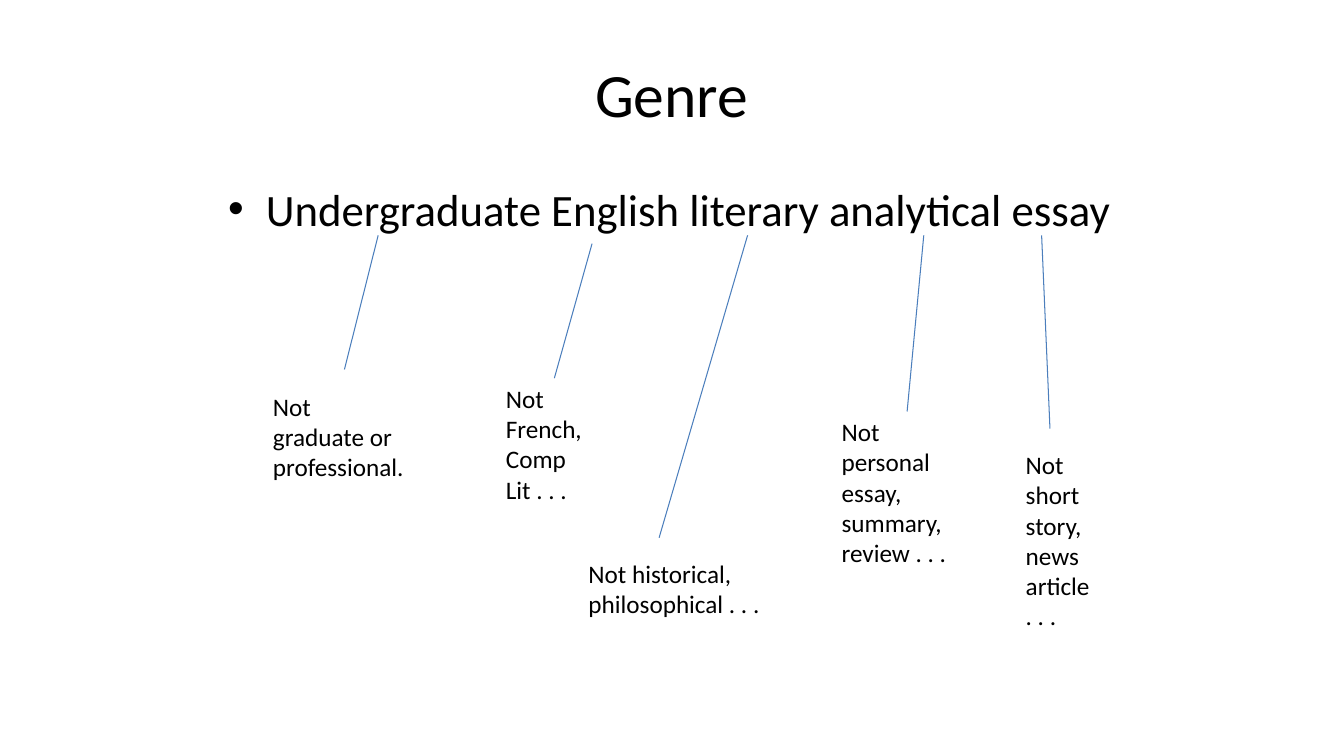
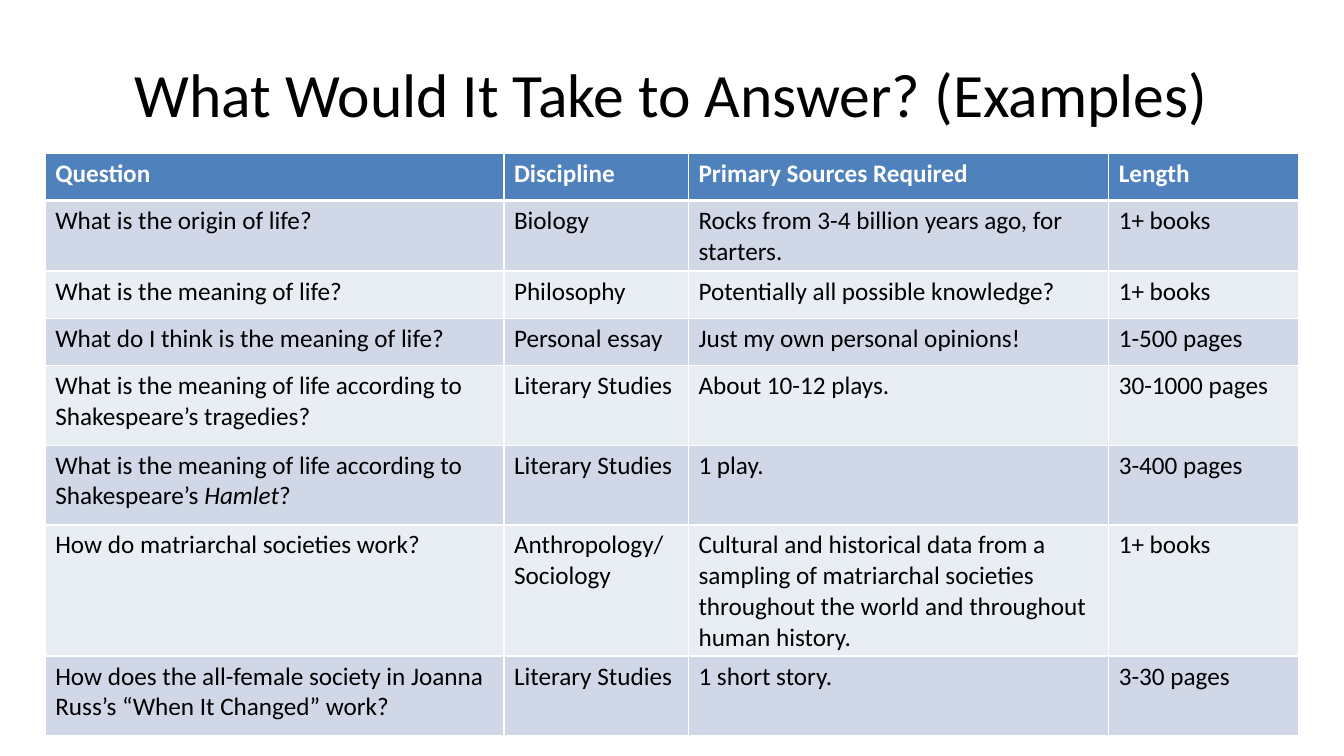
from lxml import etree
from pptx import Presentation
from pptx.dml.color import RGBColor as RGB
from pptx.enum.shapes import MSO_CONNECTOR as CONN
from pptx.enum.text import MSO_ANCHOR as ANCHOR, MSO_AUTO_SIZE as AUTO, PP_ALIGN as ALIGN
from pptx.oxml.ns import qn
from pptx.util import Cm, Pt

COLORS = {"text": "000000", "line": "4B7EBC", "header": "4F81BD",
          "odd": "D0D8E8", "even": "E9EDF4", "white": "FFFFFF"}
FONT = "Calibri"
TITLES = ["Genre", "What Would It Take to Answer? (Examples)"]

TOPIC = "Undergraduate English literary analytical essay"
# Note text, its box (left, top, width, height) and its line (x1, y1, x2, y2)
NOTES = [
    ("Not graduate or professional.",
     (6.63, 9.73, 3.81, 2.57), (9.53, 5.93, 8.68, 9.31)),
    ("Not French, Comp Lit . . .",
     (12.5, 9.53, 2.96, 3.33), (14.92, 6.14, 13.97, 9.53)),
    ("Not historical, philosophical . . .",
     (14.58, 13.94, 4.87, 1.8), (18.84, 5.93, 16.61, 13.55)),
    ("Not personal essay, summary, review . . .",
     (20.96, 10.37, 3.18, 4.11), (23.28, 5.93, 22.86, 10.37)),
    ("Not short story, news article . . .",
     (25.6, 11.2, 2.33, 4.88), (26.25, 5.93, 26.46, 10.8)),
]

COL_WIDTHS = [11.56, 4.65, 10.59, 4.78]
ROW_HEIGHTS = [1.19] * 4 + [2.01, 2.01, 2.87, 2.01]
ROWS = [
    ("Question", "Discipline", "Primary Sources Required", "Length"),
    ("What is the origin of life?", "Biology",
     "Rocks from 3-4 billion years ago, for starters.", "1+ books"),
    ("What is the meaning of life?", "Philosophy",
     "Potentially all possible knowledge?", "1+ books"),
    ("What do I think is the meaning of life?", "Personal essay",
     "Just my own personal opinions!", "1-500 pages"),
    ("What is the meaning of life according to Shakespeare’s tragedies?",
     "Literary Studies", "About 10-12 plays.", "30-1000 pages"),
    ("What is the meaning of life according to Shakespeare’s *Hamlet*?",
     "Literary Studies", "1 play.", "3-400 pages"),
    ("How do matriarchal societies work?", "Anthropology/\nSociology",
     "Cultural and historical data from a sampling of matriarchal societies "
     "throughout the world and throughout human history.", "1+ books"),
    ("How does the all-female society in Joanna Russ’s “When It Changed” work?",
     "Literary Studies", "1 short story.", "3-30 pages"),
]


def write(tf, text, size, color="text", bold=False):
    """Fill a text frame; newlines split paragraphs, asterisks mark italics."""
    for i, line in enumerate(text.split("\n")):
        p = tf.add_paragraph() if i else tf.paragraphs[0]
        for j, part in enumerate(line.split("*")):
            r = p.add_run()
            r.text = part
            style = {"name": FONT, "size": Pt(size), "bold": bold, "italic": j % 2 == 1}
            for name, value in style.items():
                setattr(r.font, name, value)
            r.font.color.rgb = RGB.from_string(COLORS[color])


def add_text(s, box, text, size):
    tf = s.shapes.add_textbox(*map(Cm, box)).text_frame
    tf.word_wrap = True
    write(tf, text, size)
    return tf


prs = Presentation()
prs.slide_width, prs.slide_height = Cm(33.87), Cm(19.05)

slides = []
for title in TITLES:
    s = prs.slides.add_slide(prs.slide_layouts[6])
    tf = add_text(s, (1.69, 0.76, 30.48, 3.18), title, 44)
    tf.vertical_anchor = ANCHOR.MIDDLE
    tf.paragraphs[0].alignment = ALIGN.CENTER
    slides.append(s)
genre, examples = slides

# Genre: the topic and a note on each of its words
tf = add_text(genre, (5.5, 4.45, 22.86, 1.9), TOPIC, 32)
pPr = tf.paragraphs[0]._p.get_or_add_pPr()
pPr.set("marL", str(Cm(0.95)))
pPr.set("indent", str(-Cm(0.95)))
etree.SubElement(pPr, qn("a:buFont")).set("typeface", "Arial")
etree.SubElement(pPr, qn("a:buChar")).set("char", "•")

for text, box, ends in NOTES:
    line = genre.shapes.add_connector(CONN.STRAIGHT, *map(Cm, ends))
    line.line.color.rgb = RGB.from_string(COLORS["line"])
    line.line.width = Pt(0.75)
    etree.SubElement(line._element.spPr, qn("a:effectLst"))
    add_text(genre, box, text, 18).auto_size = AUTO.SHAPE_TO_FIT_TEXT

# Examples: table of questions
table = examples.shapes.add_table(
    len(ROWS), len(COL_WIDTHS), Cm(1.14), Cm(3.86),
    Cm(sum(COL_WIDTHS)), Cm(sum(ROW_HEIGHTS))).table
for column, width in zip(table.columns, COL_WIDTHS):
    column.width = Cm(width)
for i, (row, height, texts) in enumerate(zip(table.rows, ROW_HEIGHTS, ROWS)):
    row.height = Cm(height)
    header = i == 0
    fill = "header" if header else "odd" if i % 2 else "even"
    for cell, text in zip(row.cells, texts):
        write(cell.text_frame, text, 18, "white" if header else "text", header)
        tcPr = cell._tc.get_or_add_tcPr()
        for side in "LRTB":
            thick = (side == "B" and i == 0) or (side == "T" and i == 1)
            ln = etree.SubElement(tcPr, qn(f"a:ln{side}"), w=str(Pt(3 if thick else 1)))
            solid = etree.SubElement(ln, qn("a:solidFill"))
            etree.SubElement(solid, qn("a:srgbClr"), val=COLORS["white"])
        cell.fill.solid()
        cell.fill.fore_color.rgb = RGB.from_string(COLORS[fill])

prs.save("out.pptx")
